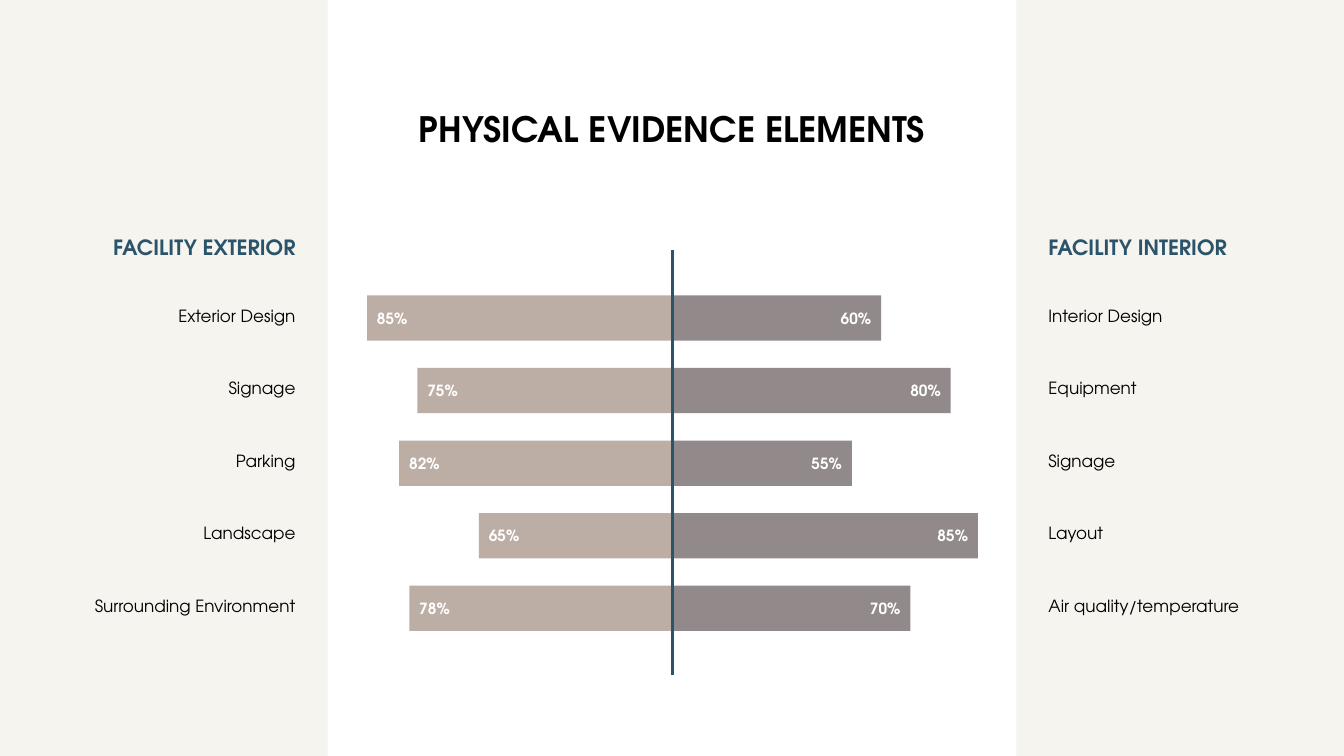
from lxml import etree
from pptx import Presentation
from pptx.dml.color import RGBColor
from pptx.enum import shapes, text
from pptx.oxml.ns import qn
from pptx.util import Inches, Pt

# Content: label, value, bar length in inches
TITLE = "PHYSICAL EVIDENCE ELEMENTS"
EXTERIOR = [
    ("Exterior Design", "85%", 3.02),
    ("Signage", "75%", 2.52),
    ("Parking", "82%", 2.7),
    ("Landscape", "65%", 1.91),
    ("Surrounding Environment", "78%", 2.6),
]
INTERIOR = [
    ("Interior Design", "60%", 2.06),
    ("Equipment", "80%", 2.75),
    ("Signage", "55%", 1.77),
    ("Layout", "85%", 3.02),
    ("Air quality/temperature", "70%", 2.35),
]
COLORS = {
    "panel": "F5F4EF", "exterior": "BDAEA5", "interior": "92898A",
    "accent": "2B546B", "ink": "000000", "white": "FFFFFF",
}
FONT = "TeX Gyre Adventor"
LEFT, RIGHT, CENTER = text.PP_ALIGN.LEFT, text.PP_ALIGN.RIGHT, text.PP_ALIGN.CENTER

# Layout in inches
WIDTH, HEIGHT = 13.33, 7.5
PANEL_WIDTH = 3.25
LABEL_WIDTH = 2.3
BAR_TOP, BAR_HEIGHT, ROW_STEP = 2.93, 0.45, 0.72
LABEL_OFFSET = 0.07

deck = Presentation()
deck.slide_width, deck.slide_height = Inches(WIDTH), Inches(HEIGHT)
page = deck.slides.add_slide(deck.slide_layouts[6])


def write(shape, words, size, color, align, bold=False):
    frame = shape.text_frame
    frame.text = words
    frame.word_wrap = True
    para = frame.paragraphs[0]
    para.alignment = align
    font = para.runs[0].font
    font.name, font.size, font.bold = FONT, Pt(size), bold
    font.color.rgb = RGBColor.from_string(COLORS[color])


def add_block(left, top, width, height, color):
    block = page.shapes.add_shape(
        shapes.MSO_SHAPE.RECTANGLE,
        Inches(left), Inches(top), Inches(width), Inches(height))
    block.shadow.inherit = False
    block.fill.solid()
    block.fill.fore_color.rgb = RGBColor.from_string(COLORS[color])
    block.line.fill.background()
    return block


def add_label(left, top, height, words, size, color, align, bold=False):
    box = page.shapes.add_textbox(
        Inches(left), Inches(top), Inches(LABEL_WIDTH), Inches(height))
    box.text_frame.margin_top = Inches(0.03)
    write(box, words, size, color, align, bold)


# Each side: heading, rows, panel left, label left, axis edge, direction, colour, alignments
SIDES = [
    ("FACILITY EXTERIOR", EXTERIOR, 0, 3.03 - LABEL_WIDTH, 6.66, -1,
     "exterior", RIGHT, LEFT),
    ("FACILITY INTERIOR", INTERIOR, WIDTH - PANEL_WIDTH, 10.3, 6.68, 1,
     "interior", LEFT, RIGHT),
]

# Panels, headings, bars and labels
for heading, rows, panel_left, label_left, edge, way, color, label_align, value_align in SIDES:
    add_block(panel_left, 0, PANEL_WIDTH, HEIGHT, "panel")
    add_label(label_left, 2.3, 0.33, heading, 15, "accent", label_align, True)
    for row, (label, value, length) in enumerate(rows):
        top = BAR_TOP + row * ROW_STEP
        bar_left = edge if way > 0 else edge - length
        bar = add_block(bar_left, top, length, BAR_HEIGHT, color)
        bar.text_frame.vertical_anchor = text.MSO_ANCHOR.MIDDLE
        write(bar, value, 11, "white", value_align, True)
        add_label(label_left, top + LABEL_OFFSET, 0.28, label, 12, "ink", label_align)

# Centre axis
axis = page.shapes.add_connector(
    shapes.MSO_CONNECTOR.STRAIGHT,
    Inches(6.67), Inches(2.48), Inches(6.67), Inches(6.7))
axis.line.color.rgb = RGBColor.from_string(COLORS["accent"])
axis.line.width = Pt(2.25)
etree.SubElement(axis._element.spPr, qn("a:effectLst"))

# Title
title = page.shapes.add_textbox(Inches(4.02), Inches(1.02), Inches(5.29), Inches(0.52))
write(title, TITLE, 25, "ink", CENTER, True)
title.text_frame.word_wrap = False

deck.save("out.pptx")
